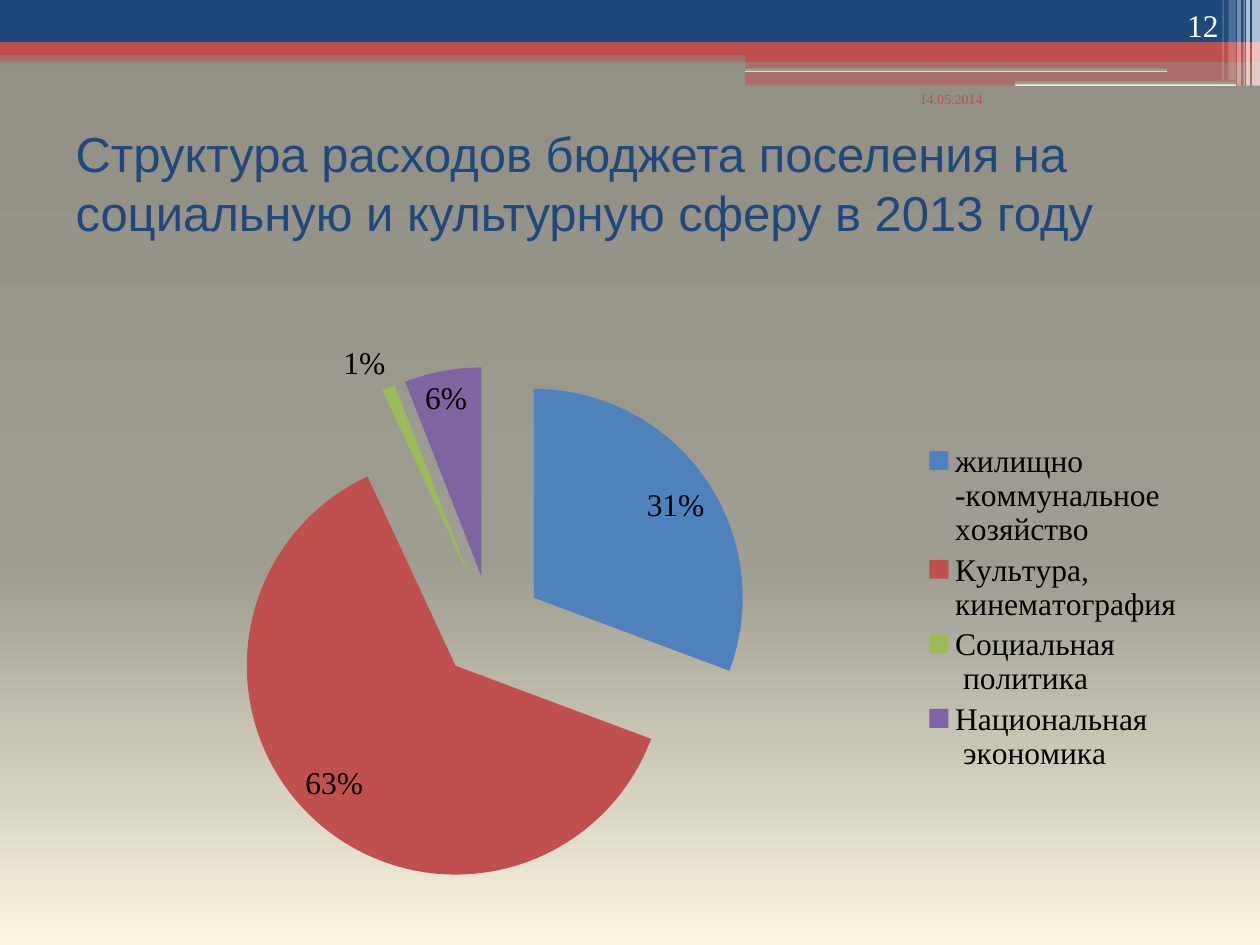
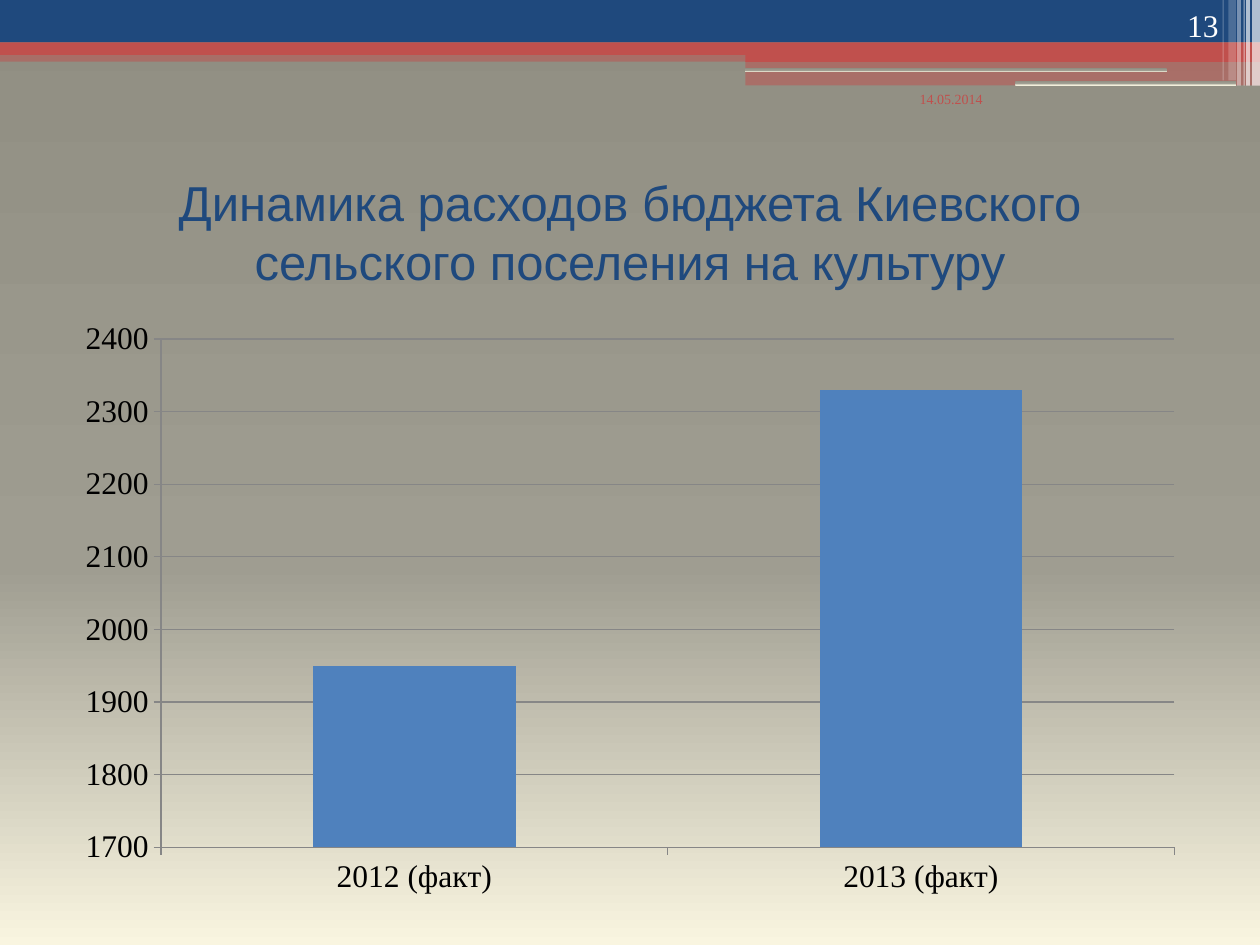
from dataclasses import dataclass

from lxml import etree
from pptx import Presentation
from pptx.chart.data import CategoryChartData
from pptx.dml.color import RGBColor
from pptx.enum import chart as charts, shapes, text
from pptx.oxml.ns import qn
from pptx.util import Pt

NAVY = RGBColor(0x1F, 0x49, 0x7D)
RED = RGBColor(0xC0, 0x50, 0x4D)
BLUE = RGBColor(0x4F, 0x81, 0xBD)
GREEN = RGBColor(0x9B, 0xBB, 0x59)
PURPLE = RGBColor(0x80, 0x64, 0xA2)
WHITE = RGBColor(0xFF, 0xFF, 0xFF)
BLACK = RGBColor(0, 0, 0)
GRID_GREY = RGBColor(0x86, 0x86, 0x86)
BACKDROP = {0: RGBColor(0x90, 0x8E, 0x82),
            60: RGBColor(0x9F, 0x9D, 0x91),
            100: RGBColor(0xF9, 0xF5, 0xE0)}
TITLE_FONT, TEXT_FONT = "Arial", "Times New Roman"
CHART_FRAME = Pt(36), Pt(177.12), Pt(648), Pt(340.56)


@dataclass
class Band:
    """A header strip; without a colour it takes the backdrop gradient."""
    left: float
    top: float
    width: float
    height: float
    color: RGBColor | None = None
    opacity: int = 100


@dataclass
class Heading:
    words: str
    top: float
    height: float
    align: text.PP_ALIGN


@dataclass
class Label:
    words: str
    left: float
    top: float
    width: float
    height: float
    size: float
    color: RGBColor
    align: text.PP_ALIGN


BANDS = [
    Band(0, 28.8, 720, 6.48, RED, 50),
    Band(0, 0, 720, 24.2, NAVY),
    Band(0, 24.2, 720, 7.2, RED),
    Band(426, 28.2, 294, 7.2, RED),
    Band(426, 34.9, 294, 14, RED, 50),
    Band(425.6, 39, 241.2, 2.16),
    Band(580.3, 46.1, 126, 2.7),
    Band(715.5, 0, 4.5, 49, WHITE, 65),
    Band(712.1, 0, 2.16, 49, WHITE, 65),
    Band(710.6, 0, 0.72, 49, WHITE, 60),
    Band(707, 0, 2.16, 49, WHITE, 40),
    Band(702, 0, 4.3, 46, WHITE, 20),
    Band(698.6, 0, 0.72, 46, WHITE, 30),
]


def set_backdrop_gradient(fill, element) -> None:
    """Give the fill inside element the three-stop vertical gradient."""
    fill.gradient()
    gradient = next(element.iter(qn("a:gradFill")))
    for child in list(gradient):
        gradient.remove(child)
    stops = etree.SubElement(gradient, qn("a:gsLst"))
    for percent, color in BACKDROP.items():
        stop = etree.SubElement(stops, qn("a:gs"), pos=str(percent * 1000))
        etree.SubElement(stop, qn("a:srgbClr"), val=str(color))
    etree.SubElement(gradient, qn("a:lin"), ang="5400000", scaled="0")


def draw_band(page, band: Band):
    kind = shapes.MSO_SHAPE.RECTANGLE if band.color else shapes.MSO_SHAPE.ROUNDED_RECTANGLE
    strip = page.shapes.add_shape(kind, Pt(band.left), Pt(band.top),
                                  Pt(band.width), Pt(band.height))
    strip.shadow.inherit = False
    strip.line.fill.background()
    if band.color is None:
        set_backdrop_gradient(strip.fill, strip.element)
        return strip
    strip.fill.solid()
    strip.fill.fore_color.rgb = band.color
    if band.opacity < 100:
        color = next(strip.element.iter(qn("a:srgbClr")))
        etree.SubElement(color, qn("a:alpha"), val=str(band.opacity * 1000))
    return strip


def style_master(deck, page) -> None:
    """Draw the bands on page, then move them below the master's placeholders."""
    master = deck.slide_master
    set_backdrop_gradient(master.background.fill, master.element)
    for index, band in enumerate(BANDS):
        element = draw_band(page, band).element
        element.nvSpPr.cNvPr.set("id", str(100 + index))
        master.element.cSld.spTree.insert(2 + index, element)


def format_text(frame, font: str, size: float, color: RGBColor, align) -> None:
    for para in frame.paragraphs:
        para.alignment = align
        for span in para.runs:
            span.font.name = font
            span.font.size = Pt(size)
            span.font.color.rgb = color


def write_title(page, heading: Heading) -> None:
    box = page.shapes.title
    box.left, box.top = Pt(36), Pt(heading.top)
    box.width, box.height = Pt(648), Pt(heading.height)
    frame = box.text_frame
    frame.text = heading.words
    frame.vertical_anchor = text.MSO_ANCHOR.MIDDLE
    frame.auto_size = text.MSO_AUTO_SIZE.NONE
    format_text(frame, TITLE_FONT, 28, NAVY, heading.align)


def write_label(page, label: Label) -> None:
    box = page.shapes.add_textbox(Pt(label.left), Pt(label.top),
                                  Pt(label.width), Pt(label.height))
    frame = box.text_frame
    frame.word_wrap = True
    frame.text = label.words
    frame.vertical_anchor = text.MSO_ANCHOR.BOTTOM
    format_text(frame, TEXT_FONT, label.size, label.color, label.align)


def add_page(deck, heading: Heading, number: int):
    page = deck.slides.add_slide(deck.slide_layouts.get_by_name("Title Only"))
    write_title(page, heading)
    write_label(page, Label(str(number), 643.68, 0, 59.76, 28.8, 18, WHITE,
                            text.PP_ALIGN.RIGHT))
    write_label(page, Label("14.05.2014", 518.4, 46.8, 76, 18, 8, RED,
                            text.PP_ALIGN.LEFT))
    return page


def add_page_chart(page, kind, values: dict[str, int], number_format="General"):
    data = CategoryChartData(number_format=number_format)
    data.categories = list(values)
    data.add_series("Series 1", list(values.values()))
    chart = page.shapes.add_chart(kind, *CHART_FRAME, data).chart
    chart.has_title = False
    chart.has_legend = False
    chart.font.name = TEXT_FONT
    chart.font.size = Pt(18)
    chart.font.color.rgb = BLACK
    return chart


def add_spending_pie(page) -> None:
    chart = add_page_chart(page, charts.XL_CHART_TYPE.PIE, {
        "жилищно\n-коммунальное хозяйство": 31,
        "Культура, \nкинематография": 63,
        "Социальная\n политика": 1,
        "Национальная\n экономика": 6,
    })
    chart.has_legend = True
    chart.legend.position = charts.XL_LEGEND_POSITION.RIGHT
    chart.legend.include_in_layout = False
    plot = chart.plots[0]
    plot.vary_by_categories = True
    series = plot.series[0]
    for index, color in enumerate((BLUE, RED, GREEN, PURPLE)):
        fill = series.points[index].format.fill
        fill.solid()
        fill.fore_color.rgb = color
    explosion = etree.Element(qn("c:explosion"), val="25")
    next(chart.element.iter(qn("c:dPt"))).addprevious(explosion)
    plot.has_data_labels = True
    labels = plot.data_labels
    labels.show_percentage = False
    labels.show_value = True
    labels.number_format = '0"%"'
    labels.number_format_is_linked = False
    labels.position = charts.XL_LABEL_POSITION.BEST_FIT


def add_culture_columns(page) -> None:
    chart = add_page_chart(page, charts.XL_CHART_TYPE.COLUMN_CLUSTERED,
                           {"2012 (факт)": 1950, "2013 (факт)": 2330})
    plot = chart.plots[0]
    plot.vary_by_categories = False
    plot.gap_width = 150
    fill = plot.series[0].format.fill
    fill.solid()
    fill.fore_color.rgb = BLUE
    scale = chart.value_axis
    scale.minimum_scale, scale.maximum_scale, scale.major_unit = 1700, 2400, 100
    scale.has_major_gridlines = True
    for axis in (scale, chart.category_axis):
        axis.major_tick_mark = charts.XL_TICK_MARK.OUTSIDE
        axis.minor_tick_mark = charts.XL_TICK_MARK.NONE
    for part in (scale, chart.category_axis, scale.major_gridlines):
        part.format.line.color.rgb = GRID_GREY
        part.format.line.width = Pt(0.75)


def main() -> None:
    deck = Presentation()
    deck.slide_width, deck.slide_height = Pt(720), Pt(540)

    spending = add_page(deck, Heading(
        "Структура расходов бюджета поселения на социальную и культурную сферу в 2013 году",
        56.16, 95.76, text.PP_ALIGN.LEFT), 12)
    style_master(deck, spending)
    add_spending_pie(spending)

    culture = add_page(deck, Heading(
        "Динамика расходов бюджета Киевского сельского поселения на культуру",
        90, 84.24, text.PP_ALIGN.CENTER), 13)
    add_culture_columns(culture)

    deck.save("out.pptx")


if __name__ == "__main__":
    main()
